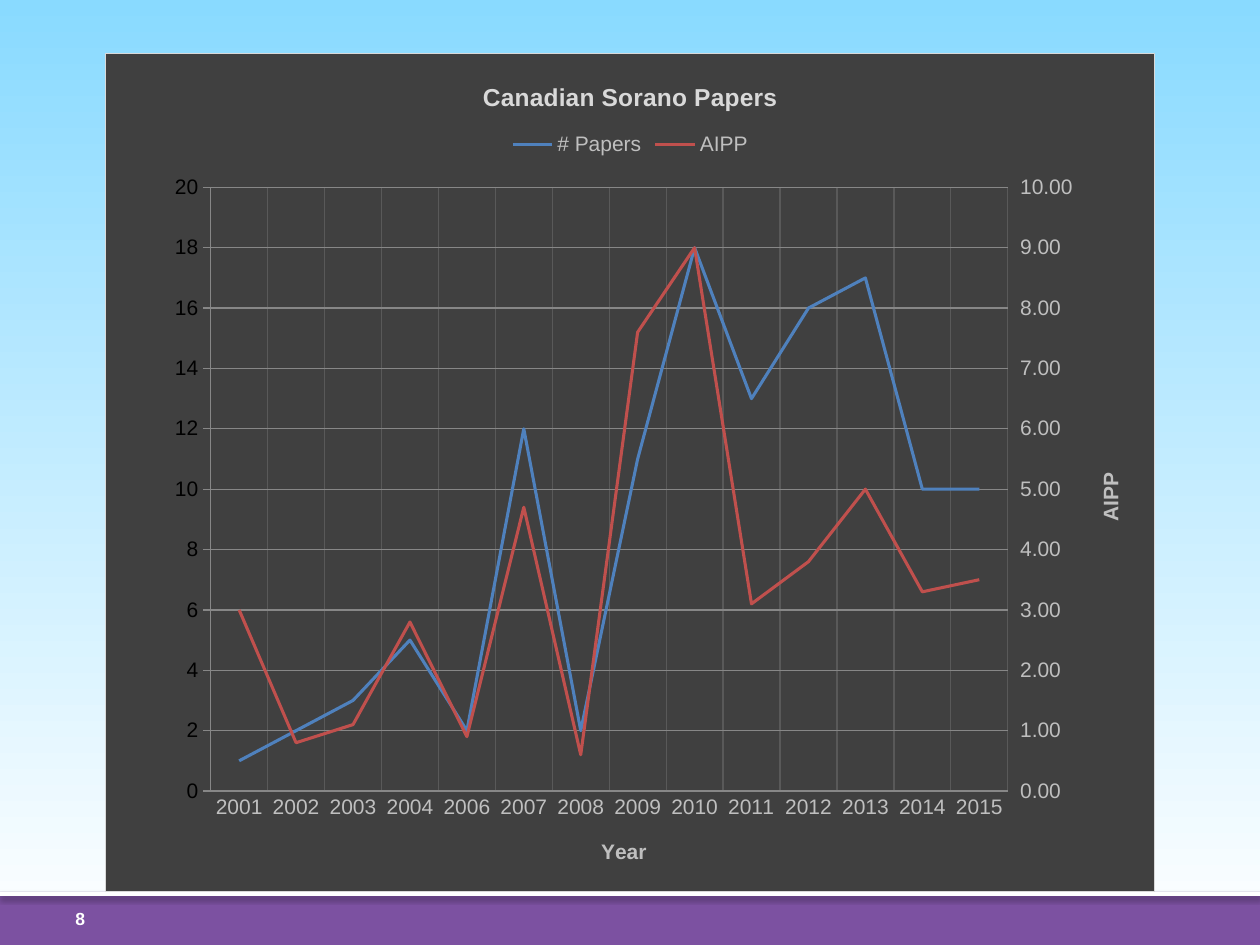
from copy import deepcopy

from lxml.etree import SubElement
from pptx import Presentation
from pptx.chart.axis import ValueAxis
from pptx.chart.data import CategoryChartData
from pptx.dml.color import RGBColor
from pptx.enum.chart import XL_CHART_TYPE as CT, XL_LEGEND_POSITION as LP, XL_TICK_MARK as TM
from pptx.enum.shapes import MSO_SHAPE
from pptx.enum.text import MSO_ANCHOR
from pptx.oxml import parse_xml
from pptx.oxml.ns import nsdecls, qn
from pptx.util import Cm, Pt

COLORS = {"sky": "89DAFF", "white": "FFFFFF", "footer": "7C51A1", "panel": "404040",
          "border": "D9D9D9", "grid": "595959", "label": "BFBFBF",
          "papers": "4F81BD", "aipp": "C0504D"}
FONT = "Arial"
WIDTH, HEIGHT = Cm(25.4), Cm(19.05)
FOOTER_TOP = Cm(17.98)

YEARS = ["2001", "2002", "2003", "2004", *map(str, range(2006, 2016))]
PAPERS = [1, 2, 3, 5, 2, 12, 2, 11, 18, 13, 16, 17, 10, 10]
AIPP = [3, 0.8, 1.1, 2.8, 0.9, 4.7, 0.6, 7.6, 9, 3.1, 3.8, 5, 3.3, 3.5]


def rgb(name):
    return RGBColor.from_string(COLORS[name])


def style_font(font, size, color, bold=False):
    font.name, font.size, font.bold = FONT, Pt(size), bold
    font.color.rgb = rgb(color)


def add_band(slide, x, y, w, h, color):
    s = slide.shapes.add_shape(MSO_SHAPE.RECTANGLE, x, y, w, h)
    s.shadow.inherit = False
    s.line.fill.background()
    s.fill.solid()
    s.fill.fore_color.rgb = rgb(color)
    return s


def add_background(slide, x, y, w, h):
    fill = add_band(slide, x, y, w, h, "sky").fill
    fill.gradient()
    fill.gradient_angle = 270
    for stop, pos, color in zip(fill.gradient_stops, (0, 1), ("sky", "white")):
        stop.position = pos
        stop.color.rgb = rgb(color)


def add_footer(slide, x, y, w, h):
    add_band(slide, x, y, w, h, "footer")
    # White rule with a soft shadow
    rule = add_band(slide, x, y, w, Cm(0.08), "white")
    rule._element.spPr.find(qn("a:effectLst")).append(parse_xml(
        f'<a:outerShdw {nsdecls("a")} blurRad="{Pt(3.1)}" dist="{Pt(1.8)}" dir="5400000" '
        'rotWithShape="0"><a:srgbClr val="000000"><a:alpha val="35000"/></a:srgbClr>'
        '</a:outerShdw>'))
    # Page number
    tf = slide.shapes.add_textbox(x + Cm(1.27), y, Cm(2.11), h).text_frame
    tf.word_wrap = True
    tf.vertical_anchor = MSO_ANCHOR.MIDDLE
    p = tf.paragraphs[0]
    p.text = "8"
    style_font(p.font, 10, "white", True)


def set_title(owner, text, size, color):
    tf = (owner.chart_title if hasattr(owner, "chart_title") else owner.axis_title).text_frame
    tf.text = text
    style_font(tf.paragraphs[0].font, size, color, True)


def style_axis(axis, title, grid=True):
    set_title(axis, title, 12, "label")
    style_font(axis.tick_labels.font, 12, "label")
    axis.major_tick_mark = axis.minor_tick_mark = TM.NONE
    axis.format.line.fill.background()
    axis.has_major_gridlines = grid
    if grid:
        line = axis.major_gridlines.format.line
        line.color.rgb = rgb("grid")
        line.width = Pt(0.75)


def split_to_right_axis(chart):
    """Move the last series to its own line plot and return its value axis."""
    area = chart._chartSpace.chart.plotArea
    left = area.find(qn("c:lineChart"))
    right = deepcopy(left)
    left.remove(left.findall(qn("c:ser"))[-1])
    right.remove(right.find(qn("c:ser")))
    left.addnext(right)

    cat, val = area.find(qn("c:catAx")), area.find(qn("c:valAx"))
    cat2, val2 = deepcopy(cat), deepcopy(val)
    val.addnext(val2)
    val2.addnext(cat2)
    cat_id, val_id = "50010", "50020"
    for ref, new_id in zip(right.findall(qn("c:axId")), (cat_id, val_id)):
        ref.set("val", new_id)
    for axis, own, cross in ((cat2, cat_id, val_id), (val2, val_id, cat_id)):
        axis.find(qn("c:axId")).set("val", own)
        axis.find(qn("c:crossAx")).set("val", cross)
    cat2.find(qn("c:delete")).set("val", "1")
    val2.find(qn("c:axPos")).set("val", "r")
    val2.find(qn("c:crosses")).set("val", "max")
    return ValueAxis(val2)


def set_plot_box(chart, **box):
    """Fix the inner plot area, in fractions of the chart."""
    area = chart._chartSpace.chart.plotArea
    for old in area.findall(qn("c:layout")):
        area.remove(old)
    layout = parse_xml(f'<c:layout {nsdecls("c")}/>')
    manual = SubElement(layout, qn("c:manualLayout"))
    settings = {"layoutTarget": "inner", "xMode": "edge", "yMode": "edge", **box}
    for tag, value in settings.items():
        SubElement(manual, qn(f"c:{tag}")).set("val", str(value))
    area.insert(0, layout)


def style_panel(chart):
    spPr = parse_xml(
        f'<c:spPr {nsdecls("c", "a")}><a:solidFill><a:srgbClr val="{COLORS["panel"]}"/>'
        f'</a:solidFill><a:ln w="{Pt(0.75)}"><a:solidFill>'
        f'<a:srgbClr val="{COLORS["border"]}"/></a:solidFill></a:ln></c:spPr>')
    chart._chartSpace.chart.addnext(spPr)


def add_papers_chart(slide, x, y, w, h):
    data = CategoryChartData()
    data.categories = YEARS
    data.add_series("# Papers", PAPERS, "General")
    data.add_series("AIPP", AIPP, "0.00")
    chart = slide.shapes.add_chart(CT.LINE, x, y, w, h, data).chart
    chart.font.name, chart.font.size = FONT, Pt(12)
    style_panel(chart)
    set_title(chart, "Canadian Sorano Papers", 14, "border")
    chart.has_legend = True
    chart.legend.position = LP.TOP
    chart.legend.include_in_layout = False
    style_font(chart.legend.font, 12, "label")

    # Axes
    right = split_to_right_axis(chart)
    style_axis(chart.category_axis, "Year")
    style_axis(chart.value_axis, "# of Papers")
    style_axis(right, "AIPP", grid=False)
    right.major_tick_mark = TM.OUTSIDE
    for axis, top, step, fmt in ((chart.value_axis, 20, 2, "General"), (right, 10, 1, "0.00")):
        axis.minimum_scale, axis.maximum_scale, axis.major_unit = 0, top, step
        axis.tick_labels.number_format = fmt
        axis.tick_labels.number_format_is_linked = False
    set_plot_box(chart, x=0.1, y=0.16, w=0.76, h=0.72)

    # Lines
    for plot, color in zip(chart.plots, ("papers", "aipp")):
        plot.vary_by_categories = False
        ser = plot.series[0]
        ser.smooth = False
        ser.format.line.color.rgb = rgb(color)
        ser.format.line.width = Pt(1.75)


def main():
    prs = Presentation()
    prs.slide_width, prs.slide_height = WIDTH, HEIGHT
    slide = prs.slides.add_slide(prs.slide_layouts[6])
    add_background(slide, 0, 0, WIDTH, HEIGHT)
    add_footer(slide, 0, FOOTER_TOP, WIDTH, HEIGHT - FOOTER_TOP)
    add_papers_chart(slide, Cm(2.12), Cm(1.06), Cm(21.17), Cm(16.93))
    prs.save("out.pptx")


if __name__ == "__main__":
    main()
